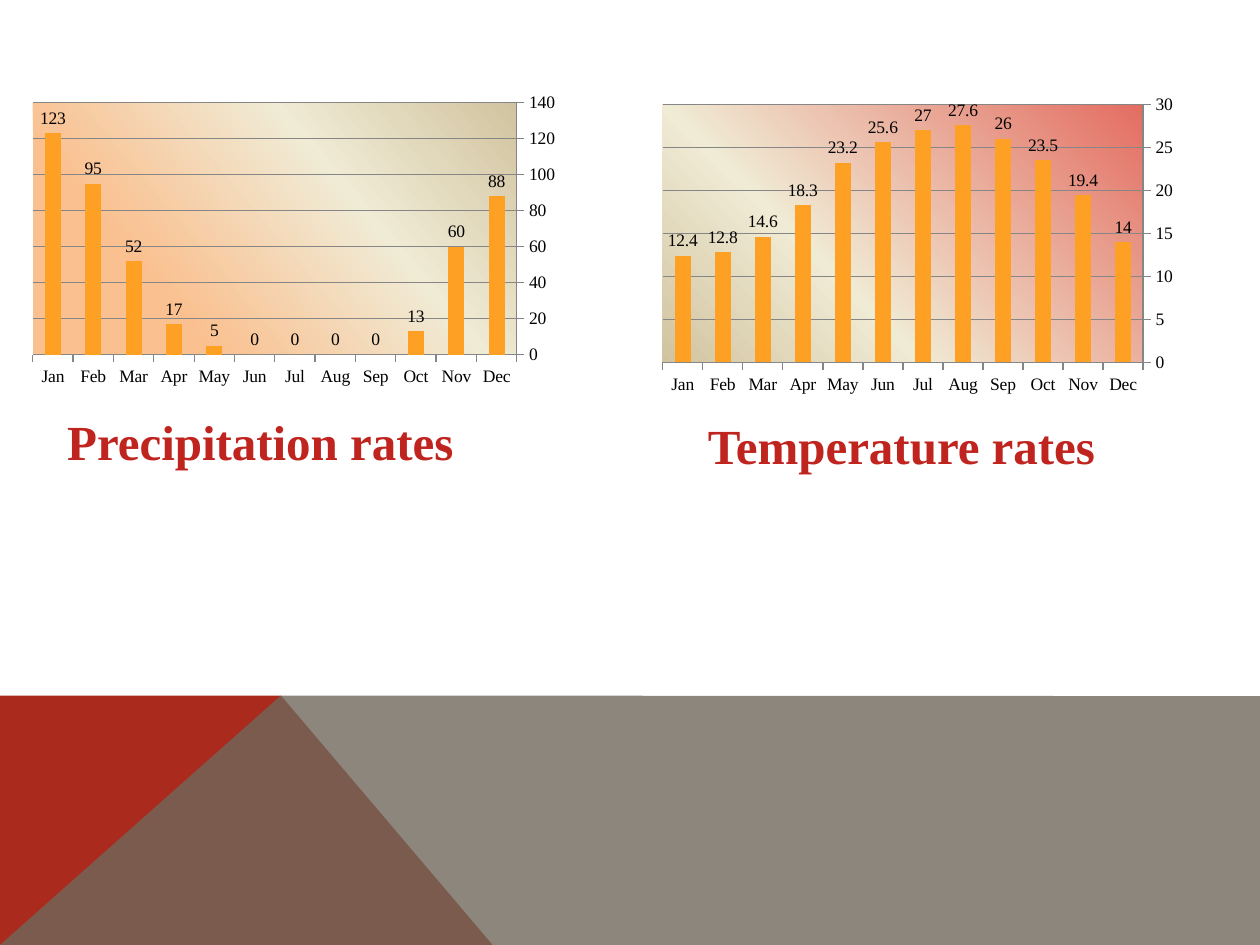
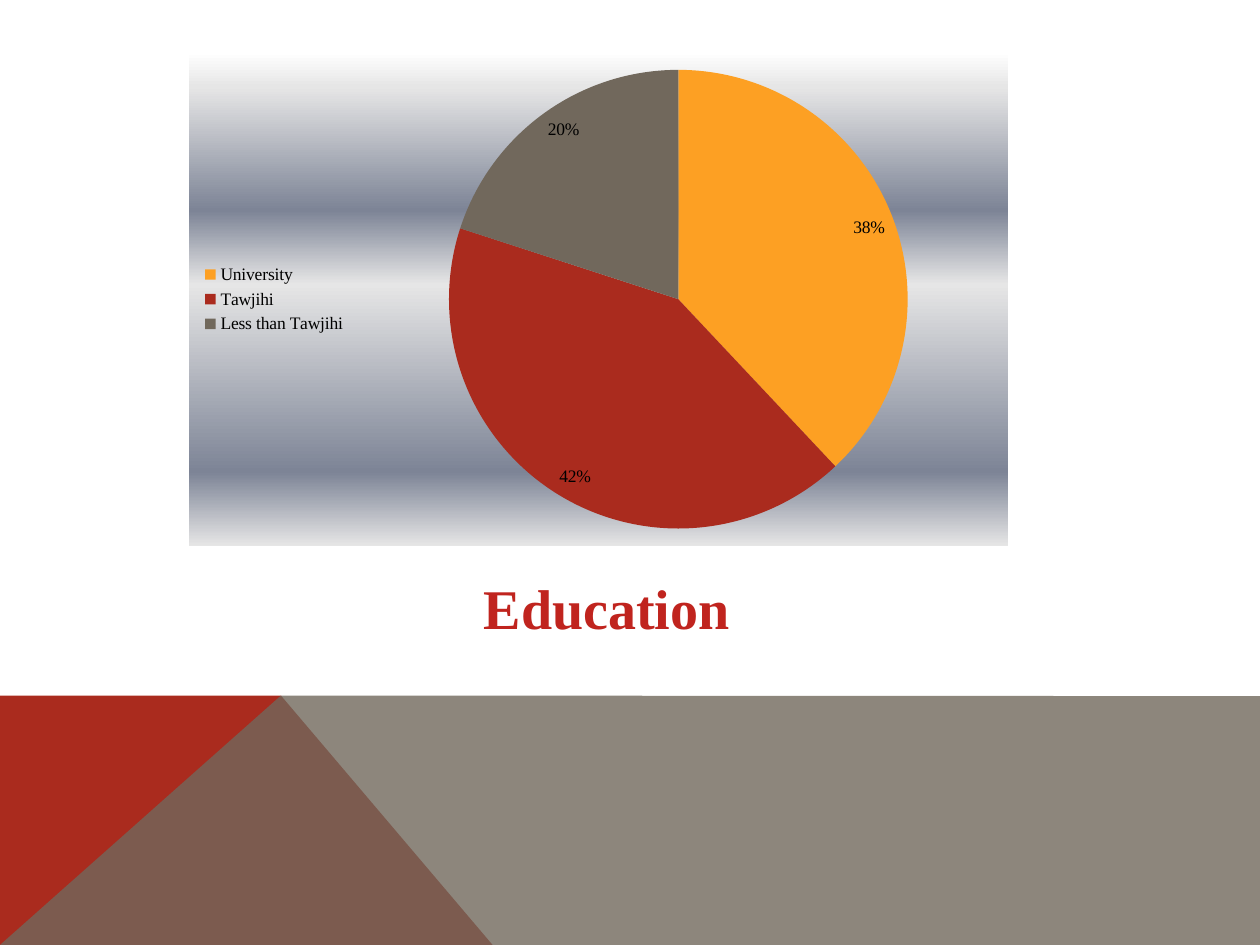
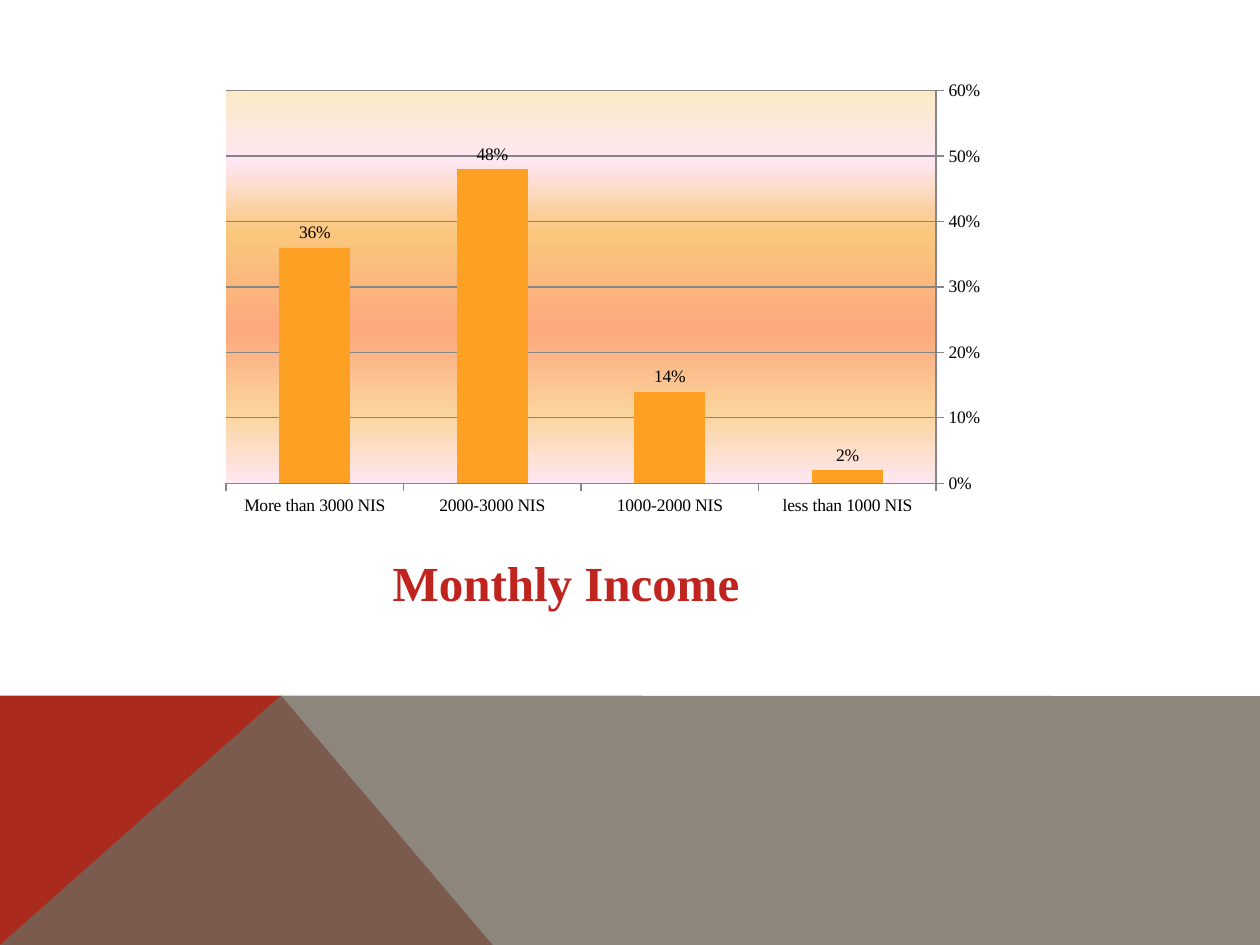
from typing import NamedTuple

from pptx import Presentation, util as u
from pptx.chart.data import CategoryChartData
from pptx.dml.color import RGBColor
from pptx.enum import chart as ch, text
from pptx.oxml import parse_xml
from pptx.oxml.ns import nsdecls, qn

# Shared style: a grid of 120 columns by 90 rows
WIDE, HIGH = u.Inches(10), u.Inches(7.5)
COL, ROW = WIDE // 120, HIGH // 90
FONT = "Times New Roman"
AMBER, BRICK, STONE, GREY, BLACK = "FDA023", "AA2B1E", "71685C", "868686", "000000"


class Fade(NamedTuple):
    angle: int
    stops: list[tuple[int, str]]


class Box(NamedTuple):
    col: float
    row: float
    cols: float
    rows: float

    def place(self) -> tuple[int, ...]:
        return tuple(round(n * unit) for n, unit in zip(self, (COL, ROW, COL, ROW)))


class Bars(NamedTuple):
    box: Box
    names: list[str]
    values: list[float]
    top: float
    step: float
    fade: Fade
    plot: tuple[float, float, float, float]
    form: str = "General"


class Pie(NamedTuple):
    box: Box
    names: list[str]
    values: list[float]
    colors: list[str]
    fade: Fade
    form: str = "0%"


class Title(NamedTuple):
    words: str
    box: Box
    size: int = 28


class Page(NamedTuple):
    charts: list
    titles: list[Title]


class Band(NamedTuple):
    points: list[tuple[float, float]]
    color: str
    solid: int = 100


# Footer bands meet at a peak
PEAK = (26.76, 66.24)
BANDS = [
    Band([(0, 90), (0, 66.24), PEAK, (46.92, 90)], BRICK),
    Band([(0, 90), PEAK, (120, 66.3), (120, 90)], STONE, 80),
]
RED = Fade(90, [(0, "EC7975"), (75, "C0241E"), (100, "940E00")])

# Page content
MONTHS = "Dec Nov Oct Sep Aug Jul Jun May Apr Mar Feb Jan".split()
PAGES = [
    Page(
        [
            Bars(Box(1, 8, 53, 30), MONTHS,
                 [88, 60, 13, 0, 0, 0, 0, 5, 17, 52, 95, 123], 140, 20,
                 Fade(320, [(26, "FAC090"), (65, "F0EBD5"), (100, "D1C39F")]),
                 (0.04, 0.06, 0.87, 0.8)),
            Bars(Box(60, 9, 52, 29), MONTHS,
                 [14, 19.4, 23.5, 26, 27.6, 27, 25.6, 23.2, 18.3, 14.6, 12.8, 12.4],
                 30, 5,
                 Fade(135, [(0, "E36D61"), (65, "F0EBD5"), (100, "D1C39F")]),
                 (0.06, 0.03, 0.88, 0.85)),
        ],
        [Title("Precipitation rates", Box(5, 38.6, 39.6, 6.9)),
         Title("Temperature rates", Box(66, 39, 39.7, 6.9))],
    ),
    Page(
        [Pie(Box(18, 5, 78, 47), ["University", "Tawjihi", "Less than Tawjihi"],
             [0.38, 0.42, 0.2], [AMBER, BRICK, STONE],
             Fade(90, [(0, "FFFFFF"), (7, "E6E6E6"), (32, "7D8496"),
                       (47, "E6E6E6"), (85, "7D8496"), (100, "E6E6E6")]))],
        [Title("Education", Box(44.8, 54, 26, 7.7), 32)],
    ),
    Page(
        [Bars(Box(20, 6, 76, 44),
              ["less than 1000 NIS", "1000-2000 NIS", "2000-3000 NIS", "More than 3000 NIS"],
              [0.02, 0.14, 0.48, 0.36], 0.6, 0.1,
              Fade(90, [(0, "FBEAC7"), (18, "FEE7F2"), (36, "FAC77D"),
                        (61, "FBA97D"), (82, "FBD49C"), (100, "FEE7F2")]),
              (0.02, 0.06, 0.89, 0.85), "0%")],
        [Title("Monthly Income", Box(36, 52, 35.8, 6.9))],
    ),
]


# Colour helpers
def paint(fill, color: str, solid: int = 100) -> None:
    fill.solid()
    fill.fore_color.rgb = RGBColor.from_string(color)
    if solid < 100:
        tone = fill.fore_color._xFill.find(qn("a:srgbClr"))
        tone.append(parse_xml(f'<a:alpha {nsdecls("a")} val="{solid * 1000}"/>'))


def blend(fade: Fade):
    stops = "".join(
        f'<a:gs pos="{spot * 1000}"><a:srgbClr val="{color}"/></a:gs>'
        for spot, color in fade.stops
    )
    return parse_xml(
        f'<a:gradFill {nsdecls("a")} rotWithShape="1"><a:gsLst>{stops}</a:gsLst>'
        f'<a:lin ang="{fade.angle * 60000}" scaled="0"/></a:gradFill>'
    )


def backdrop(fade: Fade):
    props = parse_xml(f'<c:spPr {nsdecls("c", "a")}><a:ln><a:noFill/></a:ln></c:spPr>')
    props.insert(0, blend(fade))
    return props


# Text and bands
def write(slide, words: str, box: Box, *, size: int, fade: Fade, bold: bool = True) -> None:
    frame = slide.shapes.add_textbox(*box.place()).text_frame
    frame.word_wrap = False
    frame.auto_size = text.MSO_AUTO_SIZE.SHAPE_TO_FIT_TEXT
    line = frame.paragraphs[0]
    line.alignment = text.PP_ALIGN.CENTER
    run = line.add_run()
    run.text = words
    run.font.name, run.font.size, run.font.bold = FONT, u.Pt(size), bold
    run.font._element.insert(0, blend(fade))


def draw_band(slide, band: Band) -> None:
    spots = [(round(x * COL), round(y * ROW)) for x, y in band.points]
    pen = slide.shapes.build_freeform(*spots[0])
    pen.add_line_segments(spots[1:], close=True)
    shape = pen.convert_to_shape()
    shape.shadow.inherit = False
    shape.line.fill.background()
    paint(shape.fill, band.color, band.solid)


# Charts
def add_chart(slide, kind, item: Bars | Pie, spot):
    data = CategoryChartData(number_format=item.form)
    data.categories = item.names
    data.add_series("Series 1", item.values)
    chart = slide.shapes.add_chart(kind, *item.box.place(), data).chart
    chart.has_title = False
    chart.has_legend = False
    chart.font.name, chart.font.size = FONT, u.Pt(10)
    paint(chart.font.fill, BLACK)
    plot = chart.plots[0]
    plot.has_data_labels = True
    labels = plot.data_labels
    labels.show_value, labels.show_percentage = True, False
    labels.number_format, labels.number_format_is_linked = item.form, False
    labels.position = spot
    return chart


def draw_bars(slide, item: Bars) -> None:
    chart = add_chart(slide, ch.XL_CHART_TYPE.COLUMN_CLUSTERED, item,
                      ch.XL_LABEL_POSITION.OUTSIDE_END)
    plot = chart.plots[0]
    plot.gap_width = 150
    plot.vary_by_categories = False
    paint(plot.series[0].format.fill, AMBER)
    cats, vals = chart.category_axis, chart.value_axis
    cats.reverse_order = True
    cats.has_major_gridlines = False
    vals.has_major_gridlines = True
    vals.minimum_scale, vals.maximum_scale, vals.major_unit = 0, item.top, item.step
    vals.tick_labels.number_format = item.form
    vals.tick_labels.number_format_is_linked = False
    for axis in (cats, vals):
        axis.major_tick_mark = ch.XL_TICK_MARK.OUTSIDE
        axis.minor_tick_mark = ch.XL_TICK_MARK.NONE
    for part in (cats, vals, vals.major_gridlines):
        paint(part.format.line.fill, GREY)
        part.format.line.width = u.Pt(0.75)

    # Inner plot position and gradient
    area = chart.element.find(".//" + qn("c:plotArea"))
    for old in area.findall(qn("c:layout")):
        area.remove(old)
    sizes = "".join(f'<c:{key} val="{val}"/>' for key, val in zip("xywh", item.plot))
    area.insert(0, parse_xml(
        f'<c:layout {nsdecls("c")}><c:manualLayout><c:layoutTarget val="inner"/>'
        f'<c:xMode val="edge"/><c:yMode val="edge"/>{sizes}</c:manualLayout></c:layout>'
    ))
    area.append(backdrop(item.fade))


def draw_pie(slide, item: Pie) -> None:
    chart = add_chart(slide, ch.XL_CHART_TYPE.PIE, item, ch.XL_LABEL_POSITION.INSIDE_END)
    chart.has_legend = True
    chart.legend.position = ch.XL_LEGEND_POSITION.LEFT
    chart.legend.include_in_layout = False
    plot = chart.plots[0]
    plot.vary_by_categories = True
    for index, color in enumerate(item.colors):
        paint(plot.series[0].points[index].format.fill, color)
    chart.element.find(qn("c:chart")).addnext(backdrop(item.fade))


def main() -> None:
    deck = Presentation()
    deck.slide_width, deck.slide_height = WIDE, HIGH
    for page in PAGES:
        slide = deck.slides.add_slide(deck.slide_layouts[6])
        for band in BANDS:
            draw_band(slide, band)
        for item in page.charts:
            draw = draw_pie if isinstance(item, Pie) else draw_bars
            draw(slide, item)
        for title in page.titles:
            write(slide, title.words, title.box, size=title.size, fade=RED)
    deck.save("out.pptx")


if __name__ == "__main__":
    main()
